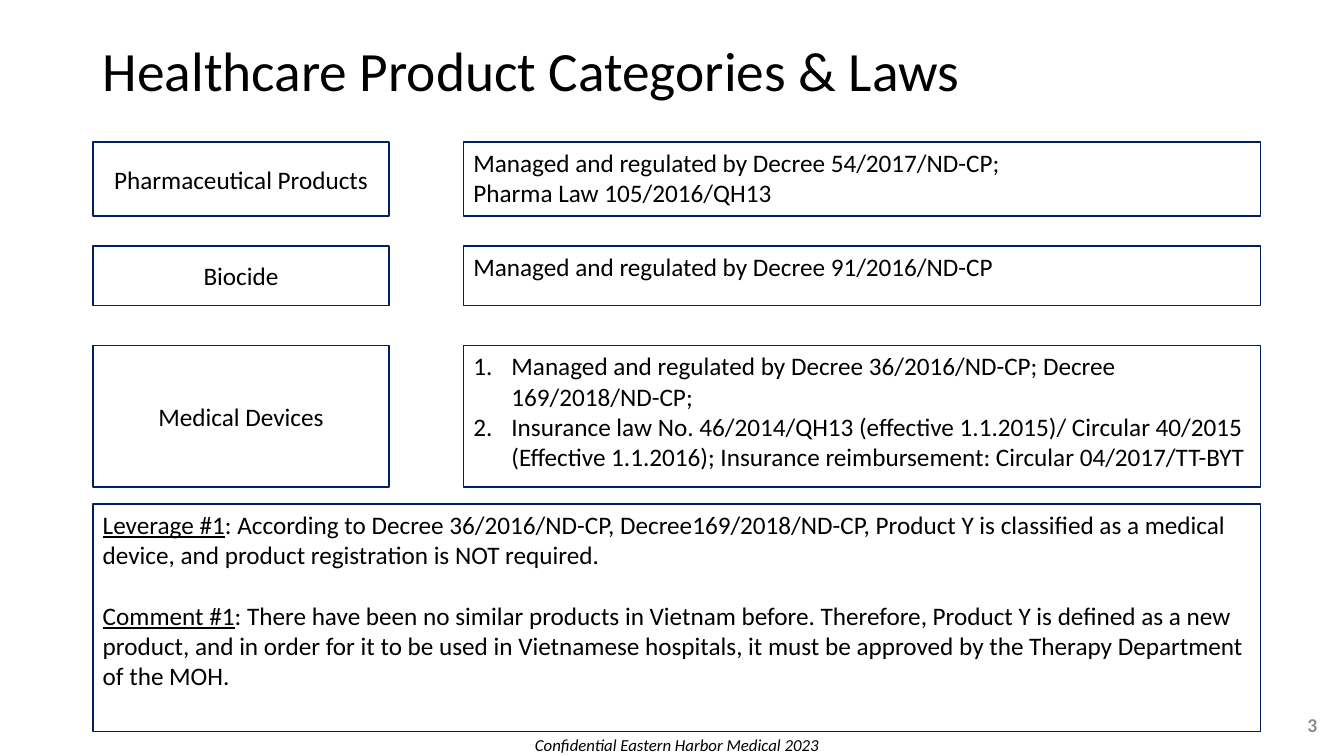
from pptx import Presentation
from pptx.dml.color import RGBColor
from pptx.enum.shapes import MSO_SHAPE
from pptx.enum.text import MSO_ANCHOR, PP_ALIGN
from pptx.oxml.ns import qn
from pptx.util import Cm, Pt
from lxml.etree import SubElement

# Content
TITLE = "Healthcare Product Categories & Laws"
CATEGORIES = [  # name, laws, numbered, top, height
    ("Pharmaceutical Products",
     ["Managed and regulated by Decree 54/2017/ND-CP;", "Pharma Law 105/2016/QH13"],
     False, 3.58, 1.86),
    ("Biocide", ["Managed and regulated by Decree 91/2016/ND-CP"], False, 6.2, 1.5),
    ("Medical Devices",
     ["Managed and regulated by Decree 36/2016/ND-CP; Decree 169/2018/ND-CP;",
      "Insurance law No. 46/2014/QH13 (effective 1.1.2015)/ Circular 40/2015 "
      "(Effective 1.1.2016); Insurance reimbursement: Circular 04/2017/TT-BYT"],
     True, 8.71, 3.56),
]
NOTES = [
    ("Leverage #1", ": According to Decree 36/2016/ND-CP, Decree169/2018/ND-CP, Product Y "
     "is classified as a medical device, and product registration is NOT required."),
    ("Comment #1", ": There have been no similar products in Vietnam before. Therefore, "
     "Product Y is defined as a new product, and in order for it to be used in Vietnamese "
     "hospitals, it must be approved by the Therapy Department of the MOH."),
]
FOOTER = "Confidential Eastern Harbor Medical 2023"
PAGE = "3"

THEME = {
    "font": "Calibri",
    "text": RGBColor(0, 0, 0), "border": RGBColor(0, 0x20, 0x60),
    "page": RGBColor(0x8C, 0x8C, 0x8C),
    "title_pt": 39.6, "body_pt": 18, "footer_pt": 12, "page_pt": 14, "note_gap_pt": 22,
}

# Layout in centimetres
LEFT, NAME_W = 2.34, 7.47
LAW_LEFT, LAW_W = 11.68, 20.09
FULL_W = LAW_LEFT + LAW_W - LEFT
INDENT = Cm(0.96)


def add_run(p, text, size="body_pt", color="text", bold=None, italic=None, underline=None):
    r = p.add_run()
    r.text = text
    f = r.font
    f.name, f.size, f.color.rgb = THEME["font"], Pt(THEME[size]), THEME[color]
    f.bold, f.italic, f.underline = bold, italic, underline


def add_box(x, y, w, h, anchor=MSO_ANCHOR.TOP):
    sp = s.shapes.add_shape(MSO_SHAPE.RECTANGLE, Cm(x), Cm(y), Cm(w), Cm(h))
    sp.shadow.inherit = False
    sp.fill.background()
    sp.line.color.rgb, sp.line.width = THEME["border"], Pt(1)
    tf = sp.text_frame
    tf.word_wrap, tf.vertical_anchor = True, anchor
    return tf


def add_label(x, y, w, h, text, align, **style):
    tf = s.shapes.add_textbox(Cm(x), Cm(y), Cm(w), Cm(h)).text_frame
    tf.word_wrap, tf.vertical_anchor = True, MSO_ANCHOR.MIDDLE
    p = tf.paragraphs[0]
    p.alignment = align
    add_run(p, text, **style)
    return p


def add_paragraph(tf, i):
    p = tf.add_paragraph() if i else tf.paragraphs[0]
    p.alignment = PP_ALIGN.LEFT
    return p


def number(p):
    pPr = p._p.get_or_add_pPr()
    pPr.set("marL", str(INDENT))
    pPr.set("indent", str(-INDENT))
    SubElement(pPr, qn("a:buFont"), typeface=THEME["font"])
    SubElement(pPr, qn("a:buAutoNum"), type="arabicPeriod")


prs = Presentation()
prs.slide_width, prs.slide_height = Cm(33.87), Cm(19.05)
s = prs.slides.add_slide(prs.slide_layouts[6])

# Title
p = add_label(LEFT, 1.02, 29.21, 1.65, TITLE, PP_ALIGN.LEFT, size="title_pt")
p.line_spacing = 0.9

# Categories with their laws
for name, laws, numbered, y, h in CATEGORIES:
    p = add_box(LEFT, y, NAME_W, h, MSO_ANCHOR.MIDDLE).paragraphs[0]
    p.alignment = PP_ALIGN.CENTER
    add_run(p, name)
    tf = add_box(LAW_LEFT, y, LAW_W, h)
    for i, law in enumerate(laws):
        p = add_paragraph(tf, i)
        if numbered:
            number(p)
        add_run(p, law)

# Notes
tf = add_box(LEFT, 12.7, FULL_W, 5.74)
for i, (heading, body) in enumerate(NOTES):
    p = add_paragraph(tf, i)
    if i:
        p.space_before = Pt(THEME["note_gap_pt"])
    add_run(p, heading, underline=True)
    add_run(p, body)

# Footer and page number
add_label(10.39, 18.44, 13.34, 0.64, FOOTER, PP_ALIGN.CENTER, size="footer_pt", italic=True)
add_label(25.83, 17.75, 7.62, 1.02, PAGE, PP_ALIGN.RIGHT,
          size="page_pt", color="page", bold=True)

prs.save("out.pptx")
